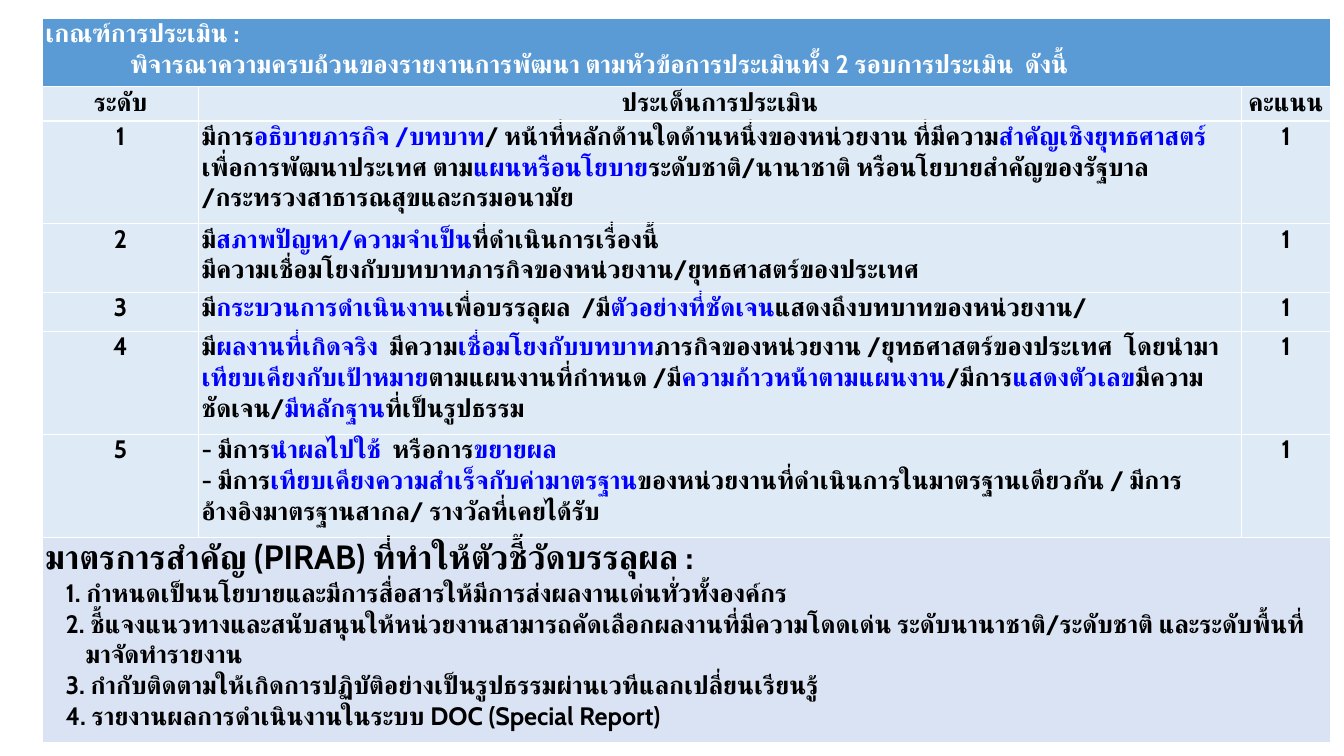
"""Build a slide with the scoring criteria table and the PIRAB measures."""
from lxml import etree
from pptx import Presentation
from pptx.dml.color import RGBColor
from pptx.enum.text import PP_ALIGN
from pptx.oxml.ns import qn
from pptx.util import Inches, Pt

CENTER, LEFT = PP_ALIGN.CENTER, PP_ALIGN.LEFT
WHITE = RGBColor(0xFF, 0xFF, 0xFF)
BLACK = RGBColor(0x00, 0x00, 0x00)
HIGHLIGHT = RGBColor(0x00, 0x00, 0xFF)
HEADER_BLUE = RGBColor(0x5B, 0x9B, 0xD5)
PALE_BLUE = RGBColor(0xDE, 0xEB, 0xF7)
PALE_LAVENDER = RGBColor(0xDA, 0xE3, 0xF3)
FONT = "Cabin"

COLUMN_WIDTHS = [1.55, 10.34, 0.89]
ROW_HEIGHTS = [0.68, 0.34, 1.02, 0.68, 0.39, 1.02, 1.02, 2.04]

HEADING = """เกณฑ์การประเมิน :
พิจารณาความครบถ้วนของรายงานการพัฒนา ตามหัวข้อการประเมินทั้ง 2 รอบการประเมิน  ดังนี้"""
COLUMN_TITLES = ["ระดับ", "ประเด็นการประเมิน", "คะแนน"]
CRITERIA = [
    "มีการ|อธิบายภารกิจ /บทบาท|/ หน้าที่หลักด้านใดด้านหนึ่งของหน่วยงาน ที่มีความ|สำคัญเชิงยุทธศาสตร์"
    "|เพื่อการพัฒนาประเทศ ตาม|แผนหรือนโยบาย|ระดับชาติ/นานาชาติ หรือนโยบายสำคัญของรัฐบาล "
    "/กระทรวงสาธารณสุขและกรมอนามัย",
    "มี|สภาพปัญหา/ความจำเป็น|ที่ดำเนินการเรื่องนี้\n"
    "มีความเชื่อมโยงกับบทบาทภารกิจของหน่วยงาน/ยุทธศาสตร์ของประเทศ",
    "มี|กระบวนการดำเนินงาน|เพื่อบรรลุผล  /มี|ตัวอย่างที่ชัดเจน|แสดงถึงบทบาทของหน่วยงาน/",
    "มี|ผลงานที่เกิดจริง  |มีความ|เชื่อมโยงกับบทบาท|ภารกิจของหน่วยงาน /ยุทธศาสตร์ของประเทศ  โดยนำมา"
    "|เทียบเคียงกับเป้าหมาย|ตามแผนงานที่กำหนด /มี|ความก้าวหน้าตามแผนงาน|/มีการ|แสดงตัวเลข"
    "|มีความชัดเจน/|มีหลักฐาน|ที่เป็นรูปธรรม",
    "- มีการ|นำผลไปใช้  |หรือการ|ขยายผล\n"
    "- มีการ|เทียบเคียงความสำเร็จกับค่ามาตรฐาน|ของหน่วยงานที่ดำเนินการในมาตรฐานเดียวกัน / "
    "มีการอ้างอิงมาตรฐานสากล/ รางวัลที่เคยได้รับ",
]
MEASURES = """มาตรการสำคัญ (PIRAB) ที่ทำให้ตัวชี้วัดบรรลุผล :
1. กำหนดเป็นนโยบายและมีการสื่อสารให้มีการส่งผลงานเด่นทั่วทั้งองค์กร
2. ชี้แจงแนวทางและสนับสนุนให้หน่วยงานสามารถคัดเลือกผลงานที่มีความโดดเด่น ระดับนานาชาติ/ระดับชาติ และระดับพื้นที่ มาจัดทำรายงาน
3. กำกับติดตามให้เกิดการปฏิบัติอย่างเป็นรูปธรรมผ่านเวทีแลกเปลี่ยนเรียนรู้
4. รายงานผลการดำเนินงานในระบบ DOC (Special Report)"""


def fill_cell(cell, text, fill, align=LEFT, color=BLACK):
    """Write lines into a cell, highlighting every second part between bars."""
    cell.fill.solid()
    cell.fill.fore_color.rgb = fill
    cell.margin_left = cell.margin_right = Inches(0.03)
    cell.margin_top = cell.margin_bottom = 0
    for number, line in enumerate(text.split("\n")):
        paragraph = cell.text_frame.add_paragraph() if number else cell.text_frame.paragraphs[0]
        paragraph.alignment = align
        font = paragraph.font
        font.name, font.size, font.bold = FONT, Pt(18), True
        font.color.rgb = color
        etree.SubElement(font._element, qn("a:cs"), typeface=FONT)
        for part_number, part in enumerate(line.split("|")):
            run = paragraph.add_run()
            run.text = part
            if part_number % 2:
                run.font.color.rgb = HIGHLIGHT
    return cell.text_frame.paragraphs


def indent(paragraph, margin, first_line):
    """Set the left margin and first-line indent of a paragraph in inches."""
    properties = paragraph._p.get_or_add_pPr()
    properties.set("marL", str(Inches(margin)))
    properties.set("indent", str(Inches(first_line)))


presentation = Presentation()
presentation.slide_width, presentation.slide_height = Inches(13.33), Inches(7.5)
slide = presentation.slides.add_slide(presentation.slide_layouts[6])

criteria_table = slide.shapes.add_table(
    len(ROW_HEIGHTS), len(COLUMN_WIDTHS), Inches(0.42), Inches(0.18),
    Inches(sum(COLUMN_WIDTHS)), Inches(sum(ROW_HEIGHTS))).table
criteria_table.horz_banding = False
for column, width in zip(criteria_table.columns, COLUMN_WIDTHS):
    column.width = Inches(width)
for row, height in zip(criteria_table.rows, ROW_HEIGHTS):
    row.height = Inches(height)

last_row = len(ROW_HEIGHTS) - 1
for row_number in (0, last_row):
    criteria_table.cell(row_number, 0).merge(criteria_table.cell(row_number, 2))

heading_lines = fill_cell(criteria_table.cell(0, 0), HEADING, HEADER_BLUE, color=WHITE)
indent(heading_lines[1], 0, 0.84)

for column_number, title in enumerate(COLUMN_TITLES):
    fill_cell(criteria_table.cell(1, column_number), title, PALE_BLUE, CENTER)

for level, criterion in enumerate(CRITERIA, start=1):
    fill_cell(criteria_table.cell(level + 1, 0), str(level), PALE_BLUE, CENTER)
    fill_cell(criteria_table.cell(level + 1, 1), criterion, PALE_BLUE)
    fill_cell(criteria_table.cell(level + 1, 2), "1", PALE_BLUE, CENTER)

measure_lines = fill_cell(criteria_table.cell(last_row, 0), MEASURES, PALE_LAVENDER)
measure_lines[0].font.size = Pt(24)
for measure in measure_lines[1:]:
    indent(measure, 0.4, -0.2)

presentation.save("out.pptx")
